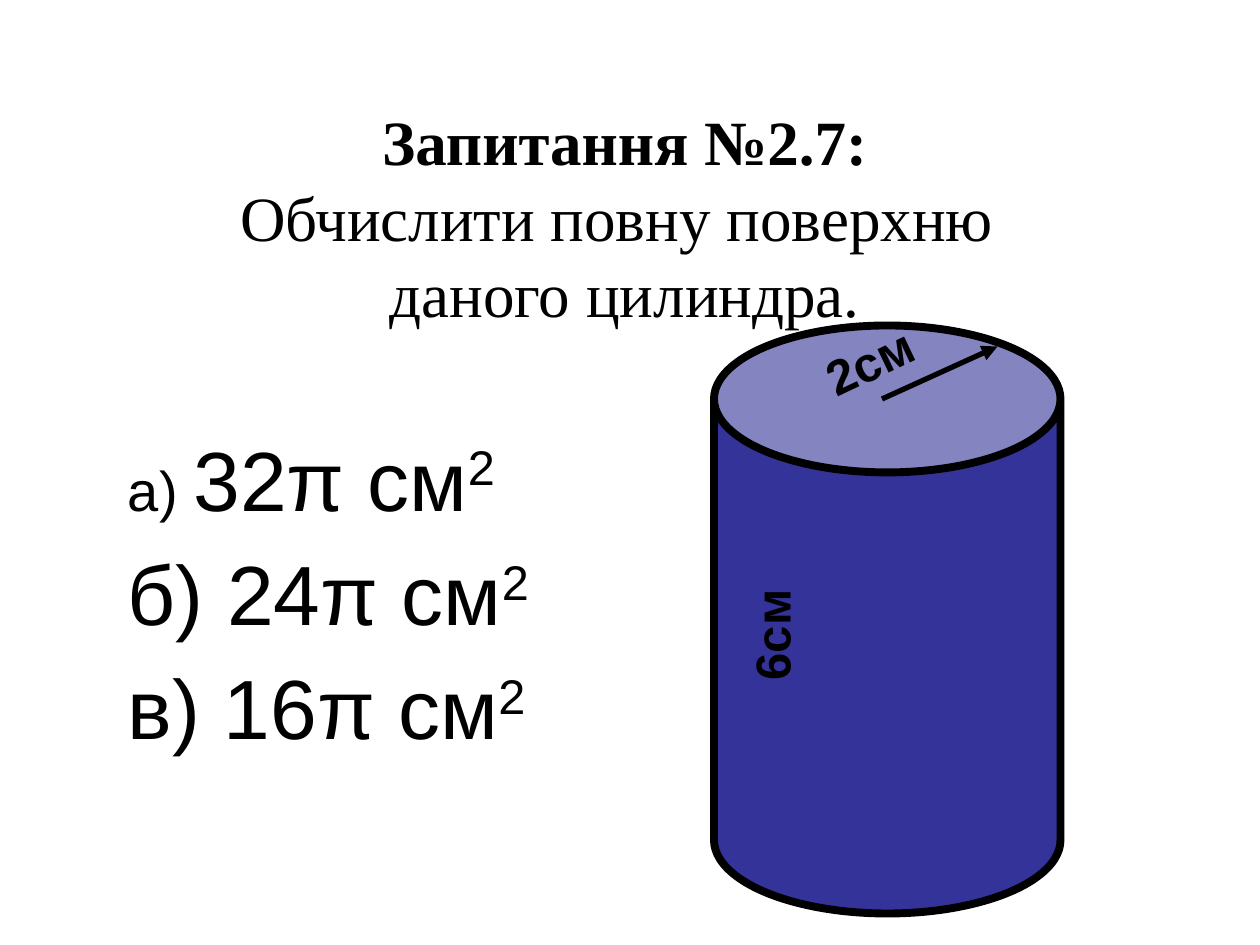
from dataclasses import dataclass

from lxml.etree import SubElement
from pptx import Presentation
from pptx.dml.color import RGBColor
from pptx.enum.shapes import MSO_CONNECTOR, MSO_SHAPE
from pptx.enum.text import MSO_ANCHOR, PP_ALIGN
from pptx.oxml.ns import qn
from pptx.slide import Slide
from pptx.util import Pt


def color(value):
    return RGBColor.from_string(value)


@dataclass
class SlideBuilder:
    slide: Slide
    ink: str = "000000"
    body_color: str = "333399"
    heading_font: str = "Times New Roman"
    text_font: str = "Arial"

    def set_font(self, paragraph, name, size, bold=None):
        font = paragraph.font
        font.name = name
        font.size = Pt(size)
        font.bold = bold
        font.color.rgb = color(self.ink)

    def text_box(self, left, top, width, height):
        shape = self.slide.shapes.add_textbox(Pt(left), Pt(top), Pt(width), Pt(height))
        shape.text_frame.word_wrap = True
        return shape

    def title(self, heading, lines, *box):
        frame = self.text_box(*box).text_frame
        frame.vertical_anchor = MSO_ANCHOR.MIDDLE
        paragraph = frame.paragraphs[0]
        paragraph.alignment = PP_ALIGN.CENTER
        paragraph.line_spacing = Pt(43.4)
        self.set_font(paragraph, self.heading_font, 36)
        run = paragraph.add_run()
        run.text = heading
        run.font.bold = True
        for line in lines:
            paragraph.add_line_break()
            paragraph.add_run().text = line

    def answers(self, items, *box):
        frame = self.text_box(*box).text_frame
        for index, (letter, letter_size, value) in enumerate(items):
            paragraph = frame.add_paragraph() if index else frame.paragraphs[0]
            properties = paragraph._p.get_or_add_pPr()
            properties.set("marL", str(Pt(27)))
            properties.set("indent", str(Pt(-27)))
            if index:
                paragraph.space_before = Pt(7.68)
            self.set_font(paragraph, self.text_font, 48)
            label = paragraph.add_run()
            label.text = f"{letter}) "
            label.font.size = Pt(letter_size)
            paragraph.add_run().text = f"{value}π см"
            power = paragraph.add_run()
            power.text = "2"
            power.font._element.set("baseline", "30000")

    def cylinder(self, left, top, width, height):
        shape = self.slide.shapes.add_shape(
            MSO_SHAPE.CAN, Pt(left), Pt(top), Pt(width), Pt(height))
        shape.adjustments[0] = 0.424
        shape.shadow.inherit = False
        shape.fill.solid()
        shape.fill.fore_color.rgb = color(self.body_color)
        shape.line.color.rgb = color(self.ink)
        shape.line.width = Pt(4.5)

    def arrow(self, *points):
        connector = self.slide.shapes.add_connector(
            MSO_CONNECTOR.STRAIGHT, *(Pt(point) for point in points))
        connector.line.color.rgb = color(self.ink)
        connector.line.width = Pt(3)
        SubElement(connector.line._get_or_add_ln(), qn("a:tailEnd"), type="triangle")
        SubElement(connector._element.spPr, qn("a:effectLst"))

    def dimension(self, text, rotation, *box):
        shape = self.text_box(*box)
        shape.rotation = rotation
        paragraph = shape.text_frame.paragraphs[0]
        paragraph.add_run().text = text
        self.set_font(paragraph, self.text_font, 28, True)


def main():
    presentation = Presentation()
    presentation.slide_width = Pt(720)
    presentation.slide_height = Pt(540)
    builder = SlideBuilder(presentation.slides.add_slide(presentation.slide_layouts[6]))
    builder.title("Запитання №2.7:",
                  ["Обчислити повну поверхню ", "даного цилиндра."],
                  48, 54.7, 618, 138)
    builder.answers([("а", 32, 32), ("б", 48, 24), ("в", 48, 16)],
                    66, 240.5, 297.5, 239)
    builder.cylinder(408, 186, 198, 336)
    builder.arrow(504, 228, 570, 198)
    builder.dimension("2см", 334.6, 462, 178, 102, 41)
    builder.dimension("6см", 270, 399, 333.5, 83.5, 41)
    presentation.save("out.pptx")


if __name__ == "__main__":
    main()
